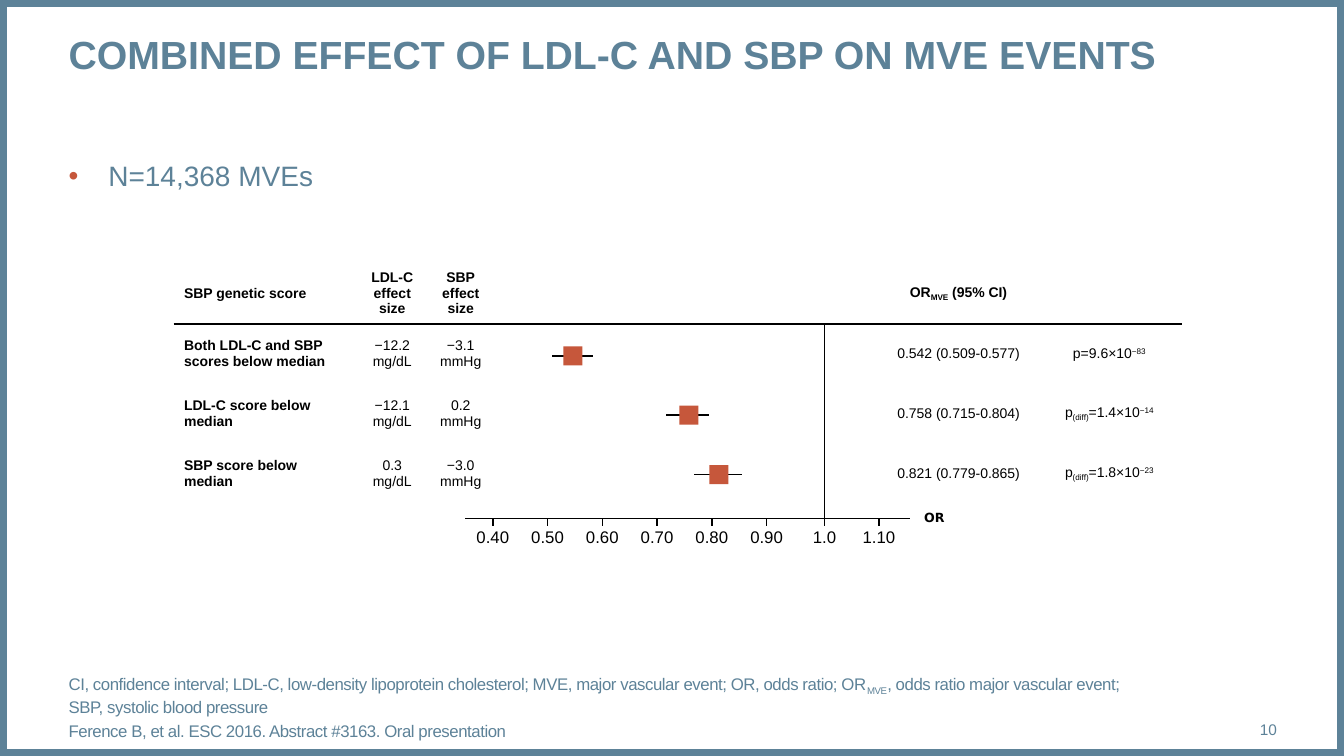
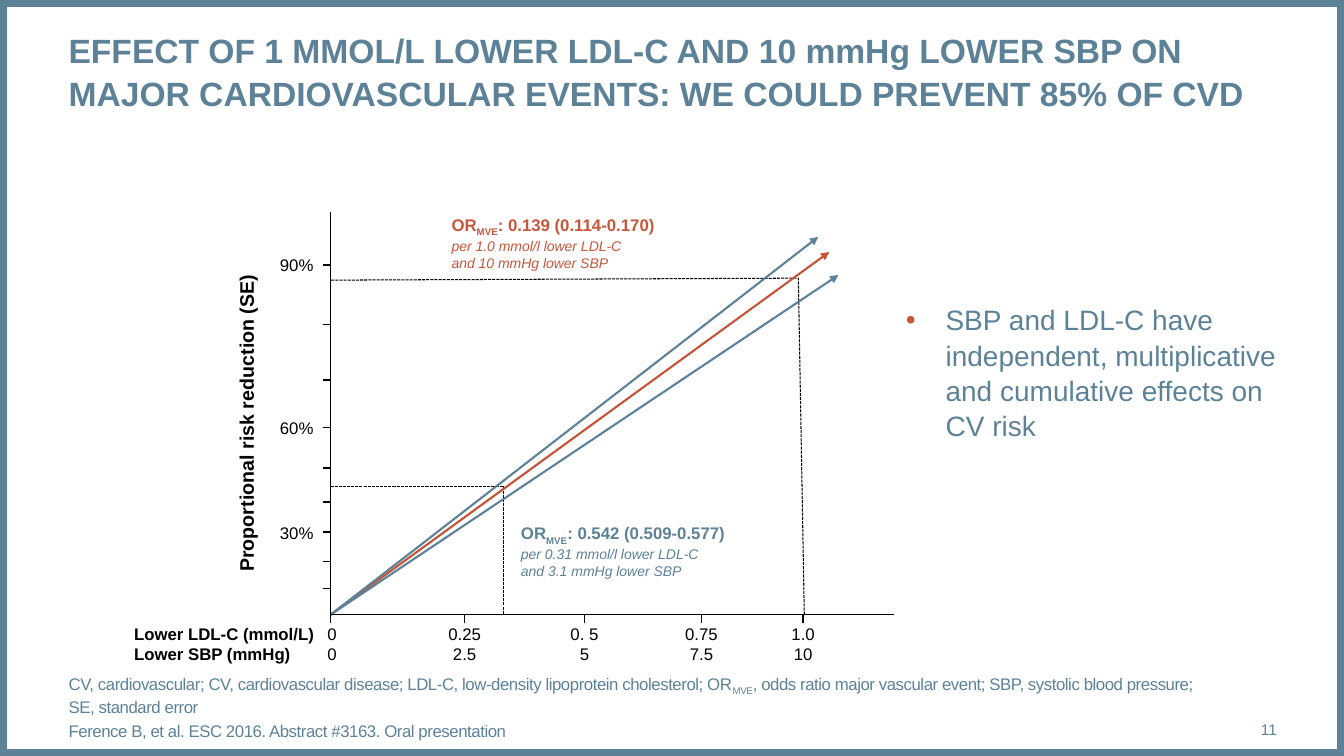
from lxml import etree
from pptx import Presentation
from pptx import util as u
from pptx.dml.color import RGBColor
from pptx.enum import dml, shapes, text
from pptx.oxml import parse_xml
from pptx.oxml.ns import nsdecls, qn

STEEL, RUST, BLACK = "5D8298", "C6573B", "000000"
LEFT, CENTER, RIGHT = text.PP_ALIGN.LEFT, text.PP_ALIGN.CENTER, text.PP_ALIGN.RIGHT
TOP, MIDDLE, BOTTOM = text.MSO_ANCHOR.TOP, text.MSO_ANCHOR.MIDDLE, text.MSO_ANCHOR.BOTTOM
SUB, SUP = {"baseline": "-25000"}, {"baseline": "30000"}
MVE = ("MVE", SUB)
ORAL = "Ference B, et al. ESC 2016. Abstract #3163. Oral presentation"


def rgb(code):
    return RGBColor.from_string(code)


class Deck:
    base = {"name": "Arial", "size": 12, "color": BLACK}
    title_style = {"size": 28, "color": STEEL, "bold": True}
    body_style = {"size": 20, "color": STEEL}
    footer_style = {"color": STEEL, "spc": "-30"}
    number_style = {"size": 11, "color": STEEL}

    def __init__(self):
        self.prs = Presentation()
        self.prs.slide_width, self.prs.slide_height = u.Cm(33.87), u.Cm(19.05)
        self.slide = None

    def start(self, number, title, footer, **title_format):
        self.slide = self.prs.slides.add_slide(self.prs.slide_layouts[6])
        frame = self.box(0, 0, 33.87, 19.05)
        frame.fill.background()
        frame.line.color.rgb = rgb(STEEL)
        frame.line.width = u.Pt(10)
        self.text(1.73, 0.71, 30.45, 2.39, [[title]],
                  self.title_style | title_format, spacing=1.05)
        self.text(1.73, 17.65, 29.9, 1.02, [footer, [ORAL]], self.footer_style,
                  anchor=BOTTOM, gap=3)
        self.text(30, 17.86, 2.18, 1.02, [[str(number)]], self.number_style,
                  align=RIGHT, anchor=MIDDLE)

    def box(self, left, top, width, height, fill=None):
        shape = self.slide.shapes.add_shape(
            shapes.MSO_SHAPE.RECTANGLE, *map(u.Cm, (left, top, width, height)))
        shape.shadow.inherit = False
        if fill:
            shape.fill.solid()
            shape.fill.fore_color.rgb = rgb(fill)
            shape.line.fill.background()
        return shape

    def run(self, paragraph, words, style):
        run = paragraph.add_run()
        run.text = words
        for key, value in (self.base | style).items():
            if key == "color":
                run.font.color.rgb = rgb(value)
            elif key in ("baseline", "spc"):
                run._r.get_or_add_rPr().set(key, value)
            else:
                setattr(run.font, key, u.Pt(value) if key == "size" else value)

    def typeset(self, frame, paragraphs, style, align=LEFT, gap=0, spacing=None, bullet=False):
        for index, parts in enumerate(paragraphs):
            paragraph = frame.add_paragraph() if index else frame.paragraphs[0]
            if bullet:
                self.bullet(paragraph)
            paragraph.alignment = align
            if spacing:
                paragraph.line_spacing = spacing
            if index and gap:
                paragraph.space_before = u.Pt(gap)
            for part in parts:
                words, extra = (part, {}) if isinstance(part, str) else part
                for row, line in enumerate(words.split("\n")):
                    if row:
                        paragraph.add_line_break()
                    self.run(paragraph, line, style | extra)

    def bullet(self, paragraph):
        props = paragraph._p.get_or_add_pPr()
        props.set("marL", str(u.Cm(1)))
        props.set("indent", str(-u.Cm(1)))
        color = etree.SubElement(props, qn("a:buClr"))
        etree.SubElement(color, qn("a:srgbClr")).set("val", RUST)
        etree.SubElement(props, qn("a:buFont")).set("typeface", "Arial")
        etree.SubElement(props, qn("a:buChar")).set("char", "•")

    def text(self, left, top, width, height, paragraphs, style, anchor=TOP, **layout):
        holder = self.slide.shapes.add_textbox(*map(u.Cm, (left, top, width, height)))
        frame = holder.text_frame
        settings = {"word_wrap": True, "vertical_anchor": anchor, "margin_left": 0,
                    "margin_right": 0, "margin_top": 0, "margin_bottom": 0}
        for key, value in settings.items():
            setattr(frame, key, value)
        self.typeset(frame, paragraphs, style, **layout)
        return holder

    def bullets(self, left, top, width, height, words):
        self.text(left, top, width, height, [[words]], self.body_style,
                  spacing=1.05, bullet=True)

    def tick_label(self, middle, top, *lines):
        self.text(middle - 1, top, 2, 0.51 * len(lines), [[line] for line in lines],
                  {}, align=CENTER)

    def line(self, x1, y1, x2, y2, color=BLACK, width=1, arrow=False):
        link = self.slide.shapes.add_connector(
            shapes.MSO_CONNECTOR.STRAIGHT, *map(u.Cm, (x1, y1, x2, y2)))
        link.line.color.rgb = rgb(color)
        link.line.width = u.Pt(width)
        if arrow:
            etree.SubElement(link.line._get_or_add_ln(), qn("a:tailEnd")).set("type", "triangle")
        etree.SubElement(link._element.spPr, qn("a:effectLst"))

    def dashes(self, *points):
        start, *rest = [tuple(map(u.Cm, point)) for point in points]
        builder = self.slide.shapes.build_freeform(*start)
        builder.add_line_segments(rest, close=False)
        guide = builder.convert_to_shape()
        guide.shadow.inherit = False
        guide.fill.background()
        guide.line.color.rgb = rgb(BLACK)
        guide.line.width = u.Pt(0.75)
        guide.line.dash_style = dml.MSO_LINE.SQUARE_DOT

    def table(self, left, top, widths, row_height, rows):
        grid = self.slide.shapes.add_table(
            len(rows), len(widths), u.Cm(left), u.Cm(top),
            u.Cm(sum(widths)), u.Cm(row_height * len(rows))).table
        grid.first_row = grid.horz_banding = False
        for column, width in zip(grid.columns, widths):
            column.width = u.Cm(width)
        for r, row in enumerate(rows):
            grid.rows[r].height = u.Cm(row_height)
            for c, parts in enumerate(row):
                cell = grid.cell(r, c)
                cell.fill.background()
                cell.vertical_anchor = MIDDLE
                side, edge = u.Cm(0.05 if c else 0.25), u.Cm(0.33 if r else 0.13)
                cell.margin_left = cell.margin_right = side
                cell.margin_top = cell.margin_bottom = edge
                self.typeset(cell.text_frame, [parts], {"size": 10, "bold": r == 0 or c == 0},
                             align=CENTER if c else LEFT)
                if r < 2:
                    self.rule(cell, "lnT" if r else "lnB")

    def rule(self, cell, side):
        cell._tc.get_or_add_tcPr().insert(0, parse_xml(
            f'<a:{side} {nsdecls("a")} w="12700"><a:solidFill>'
            f'<a:srgbClr val="{BLACK}"/></a:solidFill></a:{side}>'))


def forest_plot(deck):
    deck.start(10, "COMBINED EFFECT OF LDL-C AND SBP ON MVE EVENTS", [
        "CI, confidence interval; LDL-C, low-density lipoprotein cholesterol; "
        "MVE, major vascular event; OR, odds ratio; OR", MVE,
        ", odds ratio major vascular event;\nSBP, systolic blood pressure"])
    deck.bullets(1.73, 3.96, 30.45, 12.57, "N=14,368 MVEs")
    diff = ["p", ("(diff)", SUB)]
    deck.table(4.39, 6.63, [4.67, 1.65, 1.8, 9.65, 3.99, 3.61], 1.45, [
        [["SBP genetic score"], ["LDL-C effect\nsize"], ["SBP\neffect\nsize"], [],
         ["OR", MVE, " (95% CI)"], []],
        [["Both LDL-C and SBP scores below median"], ["−12.2 mg/dL"], ["−3.1\nmmHg"], [],
         ["0.542 (0.509-0.577)"], ["p=9.6×10", ("−83", SUP)]],
        [["LDL-C score below median"], ["−12.1 mg/dL"], ["0.2\nmmHg"], [],
         ["0.758 (0.715-0.804)"], diff + ["=1.4×10", ("−14", SUP)]],
        [["SBP score below median"], ["0.3\nmg/dL"], ["−3.0\nmmHg"], [],
         ["0.821 (0.779-0.865)"], diff + ["=1.8×10", ("−23", SUP)]],
    ])
    axis_y, unity_x = 13.06, 20.78
    odds = {f"0.{n}0": 12.42 + 1.38 * (n - 4) for n in range(4, 10)}
    odds |= {"1.0": unity_x, "1.10": 22.15}
    deck.line(11.73, axis_y, 22.94, axis_y)
    for value, x in odds.items():
        deck.line(x, axis_y, x, axis_y + 0.2)
        deck.tick_label(x, 13.28, value)
    deck.line(unity_x, axis_y, unity_x, 8.15)
    deck.text(23.29, 12.85, 1, 0.4, [["OR"]],
              {"name": "DejaVu Sans", "size": 9, "bold": True})
    marker = 0.48
    for low, estimate, high, y in [(13.92, 14.44, 14.94, 8.97),
                                   (16.79, 17.36, 17.88, 10.46),
                                   (17.5, 18.12, 18.69, 11.96)]:
        deck.line(low, y, high, y)
        deck.box(estimate - marker / 2, y - marker / 2, marker, marker, RUST)


def risk_reduction(deck):
    deck.start(11, "EFFECT OF 1 MMOL/L LOWER LDL-C AND 10 mmHg LOWER SBP ON MAJOR "
               "CARDIOVASCULAR EVENTS: WE COULD PREVENT 85% OF CVD", [
                   "CV, cardiovascular; CV, cardiovascular disease; LDL-C, low-density "
                   "lipoprotein cholesterol; OR", MVE,
                   ", odds ratio major vascular event; SBP, systolic blood pressure;"
                   "\nSE, standard error"], size=24)
    deck.bullets(22.83, 7.59, 10.13, 8.94, "SBP and LDL-C have independent, "
                 "multiplicative and cumulative effects on CV risk")
    origin_x, origin_y, label_y = 8.33, 15.49, 15.72
    for x, ldl, sbp in [(11.71, "0.25", "2.5"), (14.73, "0. 5", "5"),
                        (17.68, "0.75", "7.5"), (20.24, "1.0", "10")]:
        deck.line(x, origin_y, x, origin_y + 0.2)
        deck.tick_label(x, label_y, ldl, sbp)
    deck.tick_label(8.37, label_y, "0", "0")
    deck.text(3.38, label_y, 4.6, 1.02, [["Lower LDL-C (mmol/L)"], ["Lower SBP (mmHg)"]],
              {"bold": True})
    percents = {13.41: "30%", 10.77: "60%", 6.68: "90%"}
    for y in (14.83, 14.15, 13.41, 12.65, 11.79, 10.77, 9.58, 8.18, 6.68):
        deck.line(origin_x - 0.2, y, origin_x, y)
        if y in percents:
            deck.text(5.9, y - 0.25, 2, 0.51, [[percents[y]]], {}, align=RIGHT)
    axis_title = deck.text(2.21, 10.36, 8, 0.61, [["Proportional risk reduction (SE)"]],
                           {"size": 14, "bold": True}, align=CENTER)
    axis_title.rotation = 270
    for left, top, color, estimate, dose in [
            (13.13, 13.18, STEEL, "0.542 (0.509-0.577)",
             "per 0.31 mmol/l lower LDL-C\nand 3.1 mmHg lower SBP"),
            (11.38, 5.41, RUST, "0.139 (0.114-0.170)",
             "per 1.0 mmol/l lower LDL-C\nand 10 mmHg lower SBP")]:
        deck.text(left, top, 5.4, 1.37,
                  [["OR", MVE, f": {estimate}"],
                   [(dose, {"size": 10, "bold": False, "italic": True})]],
                  {"color": color, "bold": True})
    deck.dashes((origin_x, 12.27), (12.7, 12.27), (12.7, origin_y))
    deck.dashes((20.27, origin_y), (20.12, 7.01), (origin_x, 7.06))
    for tip_x, tip_y, color in [(20.9, 6.35, "C55336"), (21.13, 6.93, STEEL),
                                (20.62, 5.97, STEEL)]:
        deck.line(origin_x, origin_y, tip_x, tip_y, color, 1.5, arrow=True)
    deck.line(origin_x, origin_y, 22.53, origin_y)
    deck.line(origin_x, origin_y + 0.2, origin_x, 5.33)


def main():
    deck = Deck()
    forest_plot(deck)
    risk_reduction(deck)
    deck.prs.save("out.pptx")


if __name__ == "__main__":
    main()
